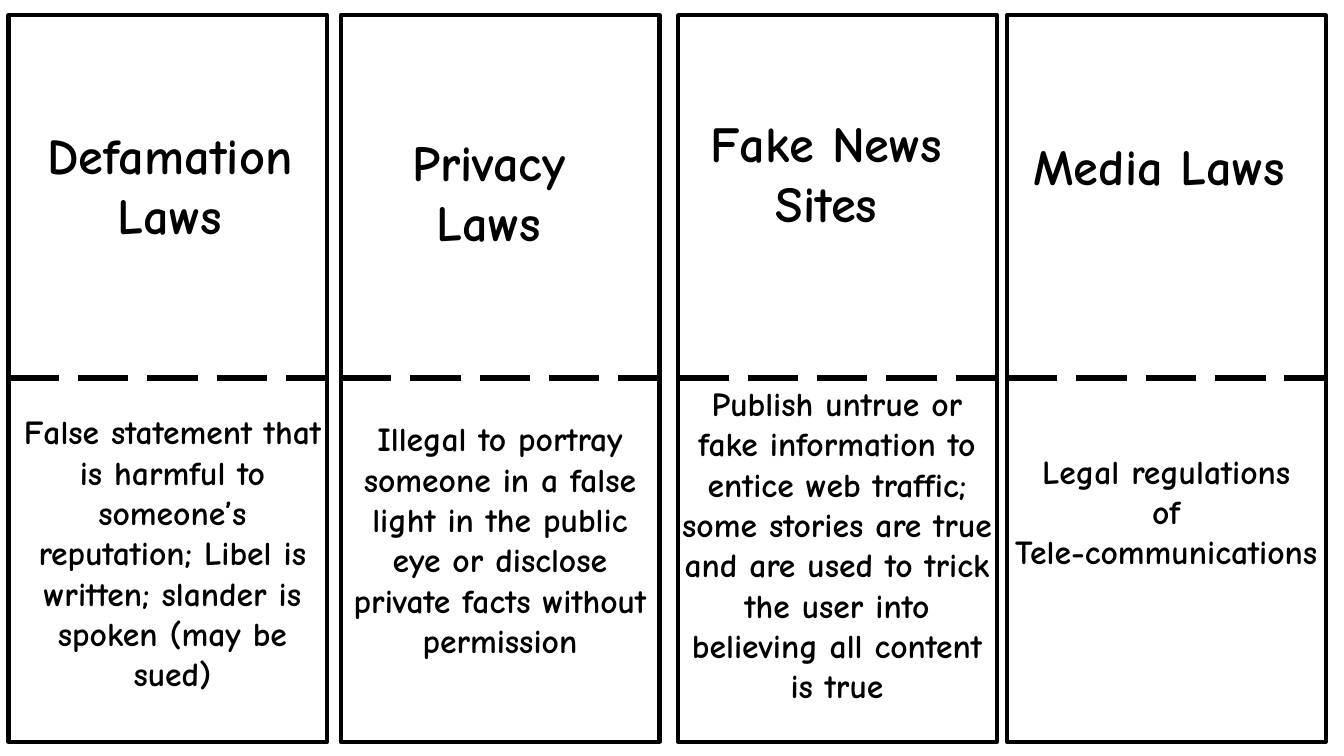
from dataclasses import dataclass
from lxml.etree import SubElement
from pptx import Presentation
from pptx.dml.color import RGBColor as RGB
from pptx.enum.dml import MSO_LINE as Dash
from pptx.enum.shapes import MSO_CONNECTOR as Connector, MSO_SHAPE as Shape
from pptx.enum.text import MSO_AUTO_SIZE as AutoSize, PP_ALIGN as Align
from pptx.oxml.ns import qn
from pptx.util import Pt


@dataclass(frozen=True)
class Theme:
    font: str = "Comic Neue"
    ink: RGB = RGB(0, 0, 0)
    paper: RGB = RGB(255, 255, 255)
    term_size: int = 36
    meaning_size: int = 24
    border: float = 3
    fold: float = 4.5


def write_text(frame, text, *, font, size, color, bold=True, align=Align.CENTER):
    for index, line in enumerate(text.split("\n")):
        paragraph = frame.paragraphs[0] if index == 0 else frame.add_paragraph()
        paragraph.alignment = align
        run = paragraph.add_run()
        run.text = line
        run.font.name = font
        run.font.size = Pt(size)
        run.font.bold = bold
        run.font.color.rgb = color


class CardSlide:
    def __init__(self, slide, theme):
        self.shapes = slide.shapes
        self.theme = theme

    def card(self, left, top, width, height):
        card = self.shapes.add_shape(
            Shape.RECTANGLE, Pt(left), Pt(top), Pt(width), Pt(height))
        card.shadow.inherit = False
        card.fill.solid()
        card.fill.fore_color.rgb = self.theme.paper
        card.line.color.rgb = self.theme.ink
        card.line.width = Pt(self.theme.border)

    def fold(self, left, y, width):
        fold = self.shapes.add_connector(
            Connector.STRAIGHT, Pt(left), Pt(y), Pt(left + width), Pt(y))
        fold.line.color.rgb = self.theme.ink
        fold.line.width = Pt(self.theme.fold)
        fold.line.dash_style = Dash.LONG_DASH
        SubElement(fold._element.spPr, qn("a:effectLst"))

    def text(self, text, box, size):
        frame = self.shapes.add_textbox(*map(Pt, box)).text_frame
        frame.word_wrap = True
        frame.auto_size = AutoSize.SHAPE_TO_FIT_TEXT
        write_text(frame, text, font=self.theme.font, size=size, color=self.theme.ink)


CARD_TOP, CARD_WIDTH, CARD_HEIGHT = 10.8, 227.7, 519
FOLD_Y = 270

CARDS = [
    (6, "Defamation Laws", (9.4, 85, 224, 94.3),
     "False statement that is harmful to someone’s reputation; Libel is written; "
     "slander is spoken (may be sued)", (9.4, 290.2, 227.5, 211)),
    (243.4, "Privacy Laws", (252, 90, 194.4, 94.3),
     "Illegal to portray someone in a false light in the public eye or disclose "
     "private facts without permission", (242.6, 295.2, 229, 234.7)),
    (484.4, "Fake News Sites", (493.2, 76.3, 194.4, 138.2),
     "Publish untrue or fake information to entice web traffic; some stories are "
     "true and are used to trick the user into believing all content is true",
     (480.2, 270, 235.4, 269.3)),
    (719.2, "Media Laws", (730.8, 92.9, 194.4, 94.3),
     "Legal regulations\nof\nTele-communications", (708.5, 318.2, 249.1, 123.8)),
]


def main():
    deck = Presentation()
    deck.slide_width, deck.slide_height = Pt(960), Pt(540)
    theme = Theme()
    page = CardSlide(deck.slides.add_slide(deck.slide_layouts[6]), theme)
    for left, term, term_box, meaning, meaning_box in CARDS:
        page.card(left, CARD_TOP, CARD_WIDTH, CARD_HEIGHT)
        page.fold(left, FOLD_Y, CARD_WIDTH)
        page.text(term, term_box, theme.term_size)
        page.text(meaning, meaning_box, theme.meaning_size)
    deck.save("out.pptx")


if __name__ == "__main__":
    main()
